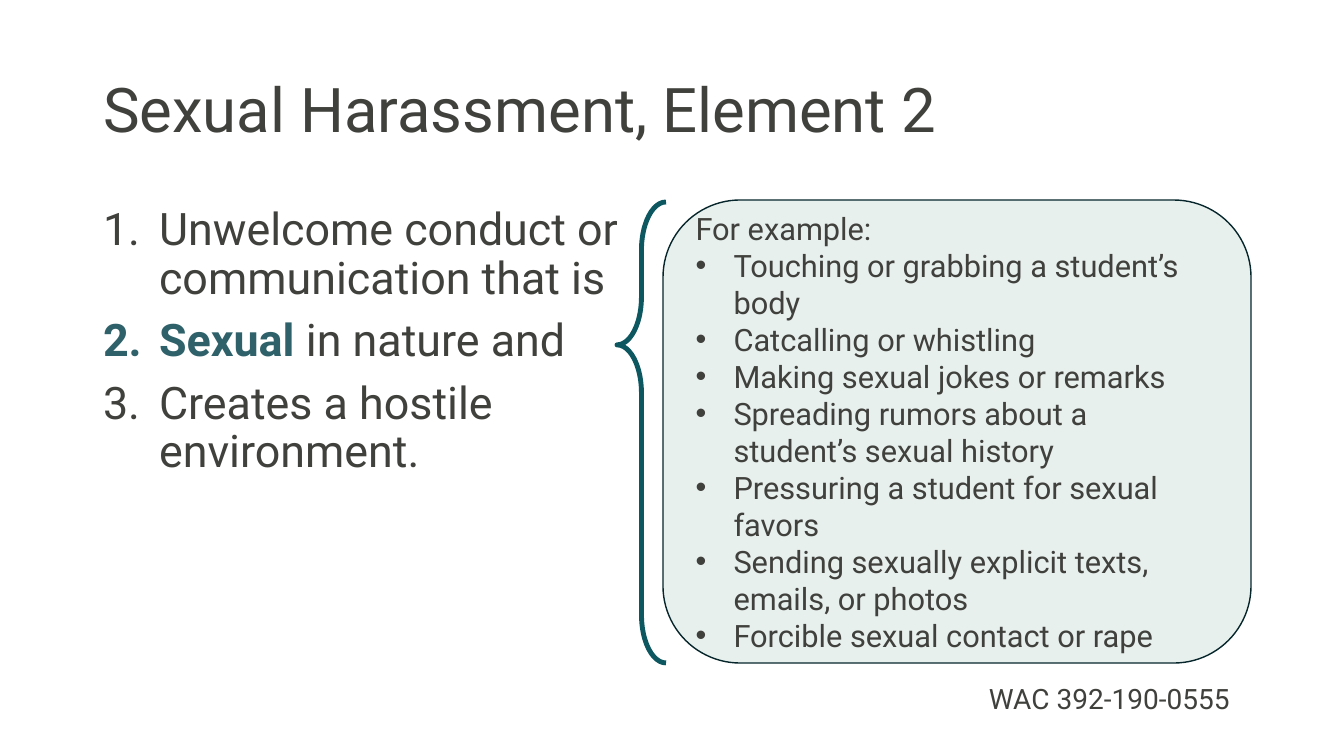
from dataclasses import dataclass

import lxml.etree
import pptx
import pptx.dml.color
import pptx.enum.shapes
import pptx.enum.text
import pptx.oxml.ns
import pptx.util

EMU_PER_PX = 914400 / 100.8
FONT = "Roboto"
INK = pptx.dml.color.RGBColor(0x40, 0x40, 0x3D)
EMPHASIS = pptx.dml.color.RGBColor(0x2E, 0x61, 0x69)
BRACE_LINE = pptx.dml.color.RGBColor(0x0D, 0x57, 0x61)
PANEL_FILL = pptx.dml.color.RGBColor(0xE8, 0xF0, 0xEE)
PANEL_LINE = pptx.dml.color.RGBColor(0x06, 0x26, 0x2B)


@dataclass(frozen=True)
class Box:
    left: int
    top: int
    width: int
    height: int

    def emu(self) -> tuple:
        return px(self.left), px(self.top), px(self.width), px(self.height)


@dataclass(frozen=True)
class Element:
    text: str
    emphasis: str = ""


TITLE_BOX = Box(93, 40, 1159, 146)
ELEMENTS_BOX = Box(93, 202, 572, 461)
BRACE_BOX = Box(617, 202, 49, 461)
PANEL_BOX = Box(663, 200, 588, 463)
CITATION_BOX = Box(979, 677, 273, 44)

ELEMENTS = [
    Element("Unwelcome conduct or communication that is"),
    Element("in nature and", emphasis="Sexual "),
    Element("Creates a hostile environment."),
]
EXAMPLES = [
    "Touching or grabbing a student’s body",
    "Catcalling or whistling",
    "Making sexual jokes or remarks",
    "Spreading rumors about a student’s sexual history",
    "Pressuring a student for sexual favors",
    "Sending sexually explicit texts, emails, or photos",
    "Forcible sexual contact or rape",
]


def px(length: int) -> int:
    return round(length * EMU_PER_PX)


def place(shape, box: Box) -> None:
    shape.left, shape.top, shape.width, shape.height = box.emu()


def style(paragraph, size: int) -> None:
    paragraph.alignment = pptx.enum.text.PP_ALIGN.LEFT
    paragraph.font.name = FONT
    paragraph.font.size = pptx.util.Pt(size)
    paragraph.font.color.rgb = INK


def add_marker(paragraph, indent: int, tag: str, **attributes: str) -> None:
    properties = paragraph._p.get_or_add_pPr()
    properties.set("marL", str(px(indent)))
    properties.set("indent", str(-px(indent)))
    marker_font = lxml.etree.SubElement(properties, pptx.oxml.ns.qn("a:buFont"))
    marker_font.set("typeface", "Arial" if tag == "a:buChar" else "+mj-lt")
    lxml.etree.SubElement(properties, pptx.oxml.ns.qn(tag), attributes)


def next_paragraph(frame, index: int):
    return frame.add_paragraph() if index else frame.paragraphs[0]


def add_title(slide) -> None:
    title = slide.shapes.title
    place(title, TITLE_BOX)
    frame = title.text_frame
    frame.text = "Sexual Harassment, Element 2"
    frame.auto_size = pptx.enum.text.MSO_AUTO_SIZE.NONE
    frame.vertical_anchor = pptx.enum.text.MSO_ANCHOR.MIDDLE
    frame.paragraphs[0].line_spacing = 0.9
    style(frame.paragraphs[0], 44)


def add_elements(slide) -> None:
    body = slide.placeholders[1]
    place(body, ELEMENTS_BOX)
    frame = body.text_frame
    frame.auto_size = pptx.enum.text.MSO_AUTO_SIZE.NONE
    for index, element in enumerate(ELEMENTS):
        paragraph = next_paragraph(frame, index)
        add_marker(paragraph, 56, "a:buAutoNum", type="arabicPeriod")
        paragraph.line_spacing = 0.9
        paragraph.space_before = pptx.util.Pt(10 if index else 0)
        style(paragraph, 32)
        if element.emphasis:
            emphasis = paragraph.add_run()
            emphasis.text = element.emphasis
            emphasis.font.bold = True
            emphasis.font.color.rgb = EMPHASIS
        paragraph.add_run().text = element.text


def add_brace(slide) -> None:
    brace = slide.shapes.add_shape(
        pptx.enum.shapes.MSO_SHAPE.LEFT_BRACE, *BRACE_BOX.emu()
    )
    brace.shadow.inherit = False
    brace.adjustments[0] = 0.98
    brace.adjustments[1] = 0.31
    brace.fill.background()
    brace.line.color.rgb = BRACE_LINE
    brace.line.width = pptx.util.Pt(3.5)


def add_examples(slide) -> None:
    panel = slide.shapes.add_shape(
        pptx.enum.shapes.MSO_SHAPE.ROUNDED_RECTANGLE, *PANEL_BOX.emu()
    )
    panel.shadow.inherit = False
    panel.fill.solid()
    panel.fill.fore_color.rgb = PANEL_FILL
    panel.line.color.rgb = PANEL_LINE
    panel.line.width = pptx.util.Pt(1)
    frame = panel.text_frame
    frame.word_wrap = True
    frame.vertical_anchor = pptx.enum.text.MSO_ANCHOR.MIDDLE
    for index, line in enumerate(["For example:", *EXAMPLES]):
        paragraph = next_paragraph(frame, index)
        if index:
            add_marker(paragraph, 38, "a:buChar", char="•")
        style(paragraph, 22)
        paragraph.add_run().text = line


def add_citation(slide) -> None:
    citation = slide.shapes.add_textbox(*CITATION_BOX.emu())
    frame = citation.text_frame
    frame.word_wrap = True
    frame.auto_size = pptx.enum.text.MSO_AUTO_SIZE.SHAPE_TO_FIT_TEXT
    frame.text = "WAC 392-190-0555"
    style(frame.paragraphs[0], 20)


def main() -> None:
    presentation = pptx.Presentation()
    presentation.slide_width = px(1344)
    presentation.slide_height = px(756)
    slide = presentation.slides.add_slide(presentation.slide_layouts[1])
    add_title(slide)
    add_elements(slide)
    add_brace(slide)
    add_examples(slide)
    add_citation(slide)
    presentation.save("out.pptx")


if __name__ == "__main__":
    main()
